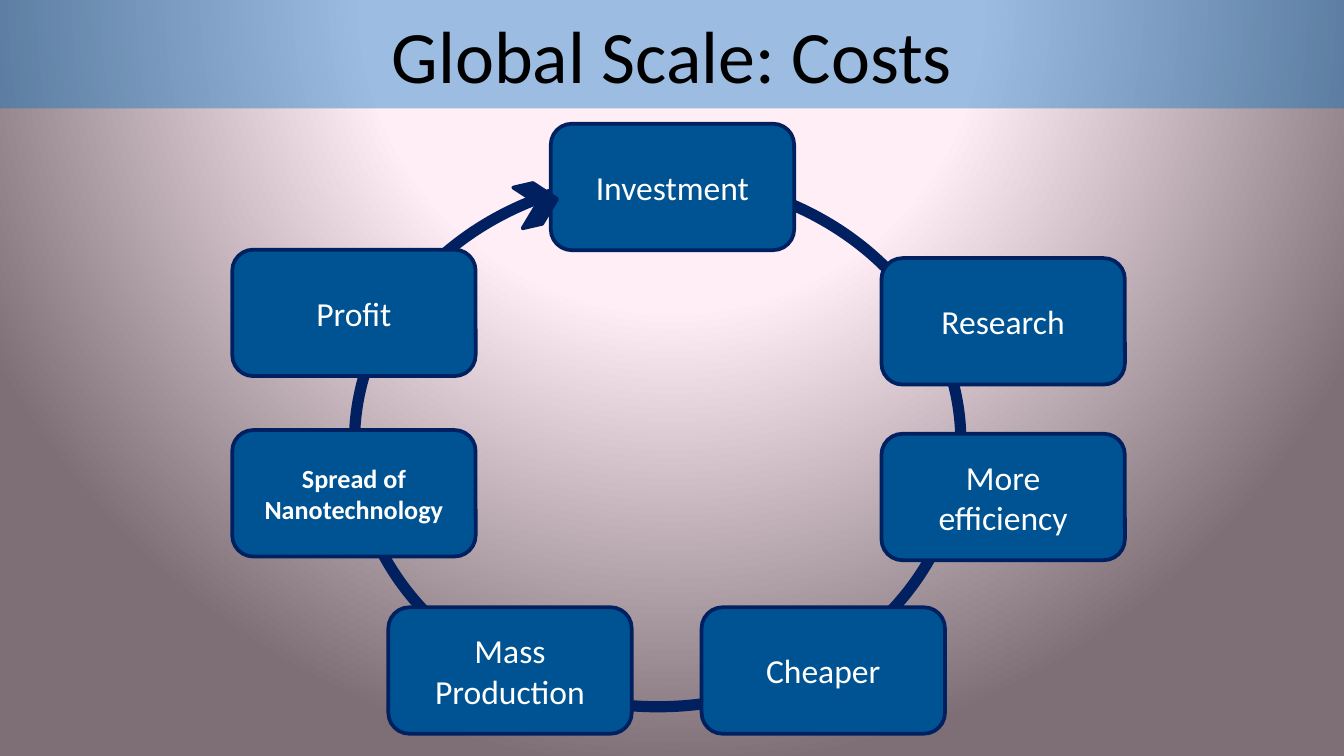
from dataclasses import dataclass

import lxml.etree
import pptx
import pptx.dml.color
import pptx.enum.shapes
import pptx.enum.text
import pptx.oxml
import pptx.oxml.ns
import pptx.util
from pptx.util import Cm

COLOURS = {
    "title band": "0070C0",
    "title text": "000000",
    "card": "005392",
    "outline": "002060",
    "card text": "FFFFFF",
    "glow centre": "FFF1F8",
    "glow middle": "FFEEF6",
    "glow edge": "7E6E75",
}
FONT = "Calibri"
SLIDE_WIDTH, SLIDE_HEIGHT = 25.4, 14.29
CARD_WIDTH, CARD_HEIGHT = 4.6, 2.39
LEFT_COLUMN, RIGHT_COLUMN, BOTTOM_ROW = 4.39, 16.66, 11.48
SHAPES = pptx.enum.shapes.MSO_SHAPE


@dataclass
class Card:
    text: str
    left: float
    top: float
    size: float = 18
    bold: bool = False


CARDS = [
    Card("Investment", 10.41, 2.34),
    Card("Research", RIGHT_COLUMN, 4.88),
    Card("More efficiency", RIGHT_COLUMN, 8.2),
    Card("Cheaper", 13.26, BOTTOM_ROW),
    Card("Mass Production", 7.34, BOTTOM_ROW),
    Card("Profit", LEFT_COLUMN, 4.72),
    Card("Spread of Nanotechnology", LEFT_COLUMN, 8.13, 14, True),
]


def colour(name: str) -> pptx.dml.color.RGBColor:
    return pptx.dml.color.RGBColor.from_string(COLOURS[name])


def paint_background(slide) -> None:
    stops = ((0, "glow centre"), (40, "glow middle"), (100, "glow edge"))
    stop_xml = "".join(
        f'<a:gs pos="{position * 1000}"><a:srgbClr val="{COLOURS[name]}"/></a:gs>'
        for position, name in stops
    )
    gradient = pptx.oxml.parse_xml(
        f'<a:gradFill {pptx.oxml.ns.nsdecls("a")} rotWithShape="1">'
        f'<a:gsLst>{stop_xml}</a:gsLst><a:path path="circle">'
        '<a:fillToRect l="50000" t="-80000" r="50000" b="180000"/>'
        "</a:path></a:gradFill>"
    )
    slide.background.fill.solid()
    solid = slide.element.find(".//" + pptx.oxml.ns.qn("p:bgPr"))[0]
    solid.getparent().replace(solid, gradient)


def write_text(shape, text: str, size: float, colour_name: str, bold: bool = False) -> None:
    frame = shape.text_frame
    frame.text = text
    frame.word_wrap = True
    frame.auto_size = pptx.enum.text.MSO_AUTO_SIZE.NONE
    frame.vertical_anchor = pptx.enum.text.MSO_ANCHOR.MIDDLE
    paragraph = frame.paragraphs[0]
    paragraph.alignment = pptx.enum.text.PP_ALIGN.CENTER
    font = paragraph.runs[0].font
    font.name = FONT
    font.size = pptx.util.Pt(size)
    font.bold = bold
    font.color.rgb = colour(colour_name)


def format_title(slide) -> None:
    title = slide.shapes.title
    title.left, title.top = Cm(0), Cm(0)
    title.width, title.height = Cm(SLIDE_WIDTH), Cm(2.05)
    title.fill.solid()
    title.fill.fore_color.rgb = colour("title band")
    band = title.element.spPr.find(".//" + pptx.oxml.ns.qn("a:srgbClr"))
    lxml.etree.SubElement(band, pptx.oxml.ns.qn("a:alpha"), val="39000")
    write_text(title, "Global Scale: Costs", 39.6, "title text")


def add_outlined(slide, kind, left: float, top: float, width: float, height: float,
                 fill: str | None = None, line_width: float = 2):
    shape = slide.shapes.add_shape(kind, Cm(left), Cm(top), Cm(width), Cm(height))
    shape.shadow.inherit = False
    shape.line.color.rgb = colour("outline")
    shape.line.width = pptx.util.Pt(line_width)
    if fill:
        shape.fill.solid()
        shape.fill.fore_color.rgb = colour(fill)
    else:
        shape.fill.background()
    return shape


def add_card(slide, card: Card) -> None:
    shape = add_outlined(slide, SHAPES.ROUNDED_RECTANGLE, card.left, card.top,
                         CARD_WIDTH, CARD_HEIGHT, "card")
    write_text(shape, card.text, card.size, "card text", card.bold)


def main() -> None:
    presentation = pptx.Presentation()
    presentation.slide_width = Cm(SLIDE_WIDTH)
    presentation.slide_height = Cm(SLIDE_HEIGHT)
    slide = presentation.slides.add_slide(presentation.slide_layouts[5])
    paint_background(slide)
    format_title(slide)
    add_outlined(slide, SHAPES.OVAL, 6.7, 3.35, 11.46, 10.01, line_width=6)
    for card in CARDS:
        add_card(slide, card)
    arrowhead = add_outlined(slide, SHAPES.CHEVRON, 9.78, 3.45, 0.76, 0.79, "outline")
    arrowhead.rotation = 347.1
    presentation.save("out.pptx")


if __name__ == "__main__":
    main()
